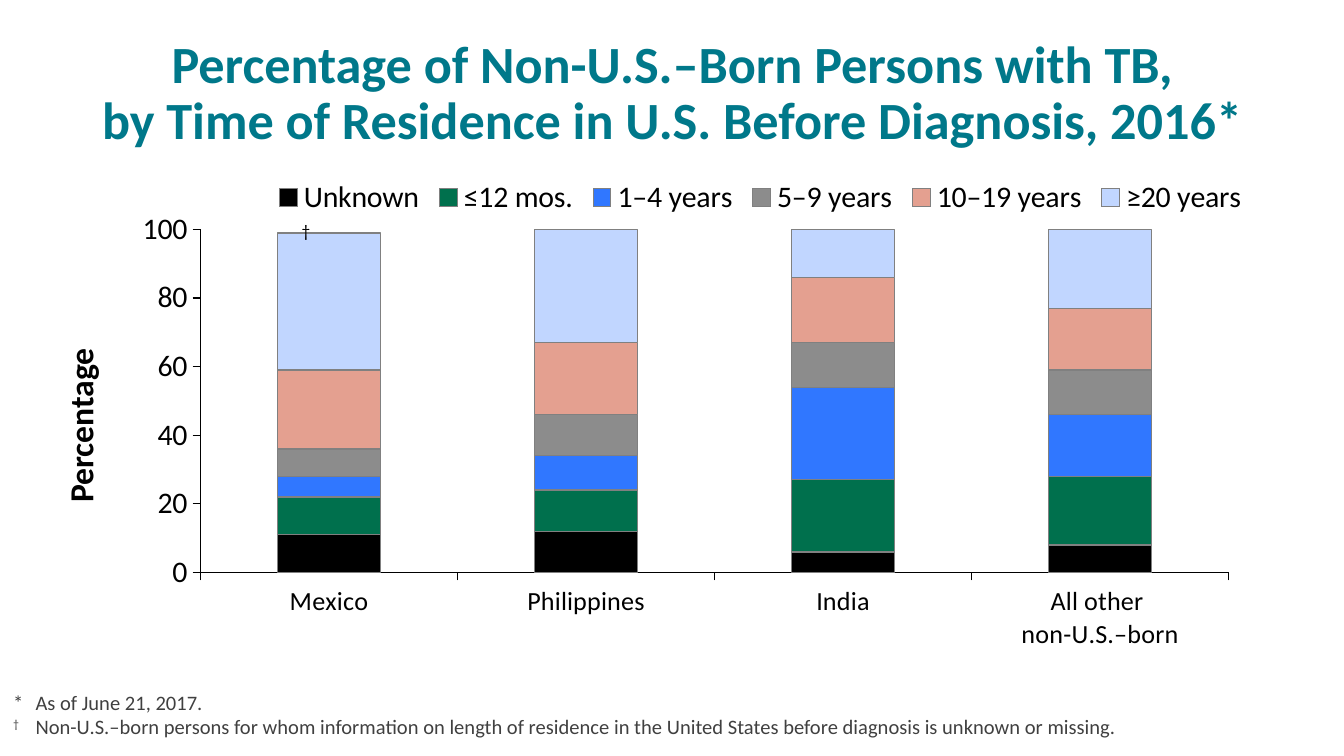
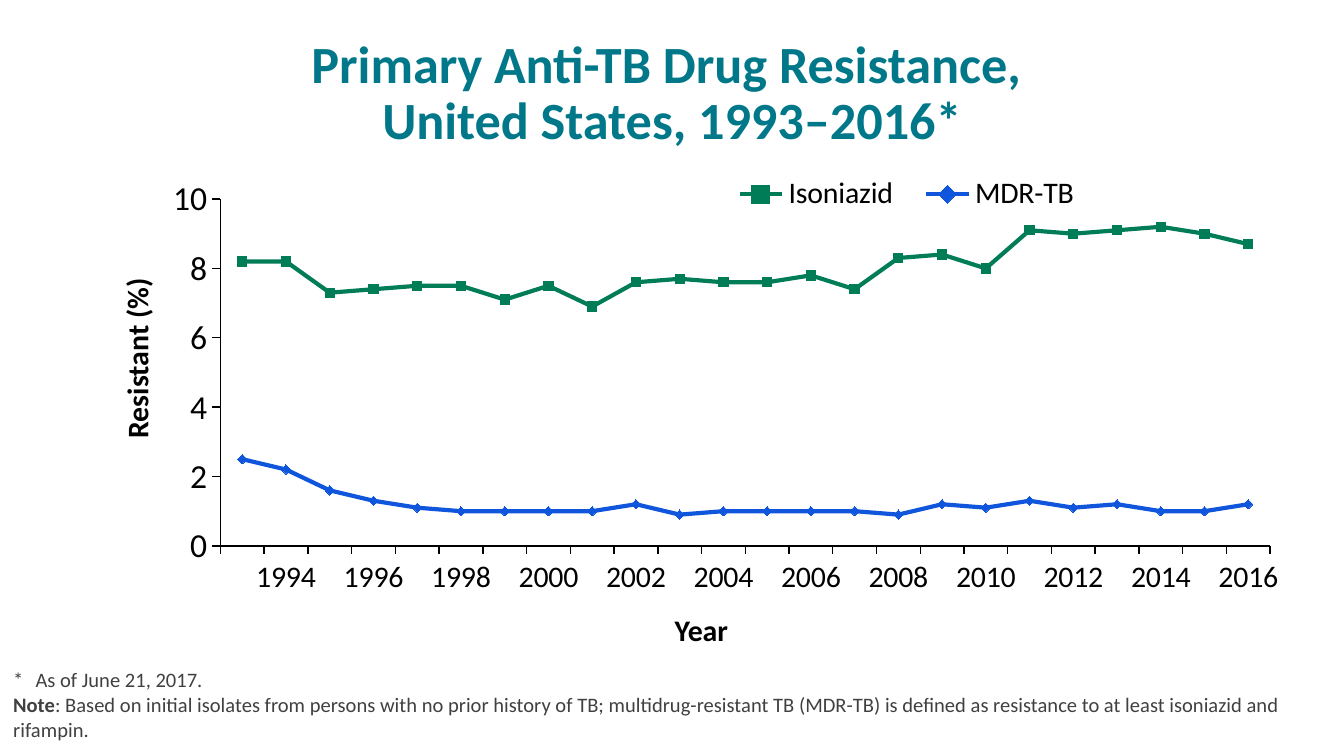
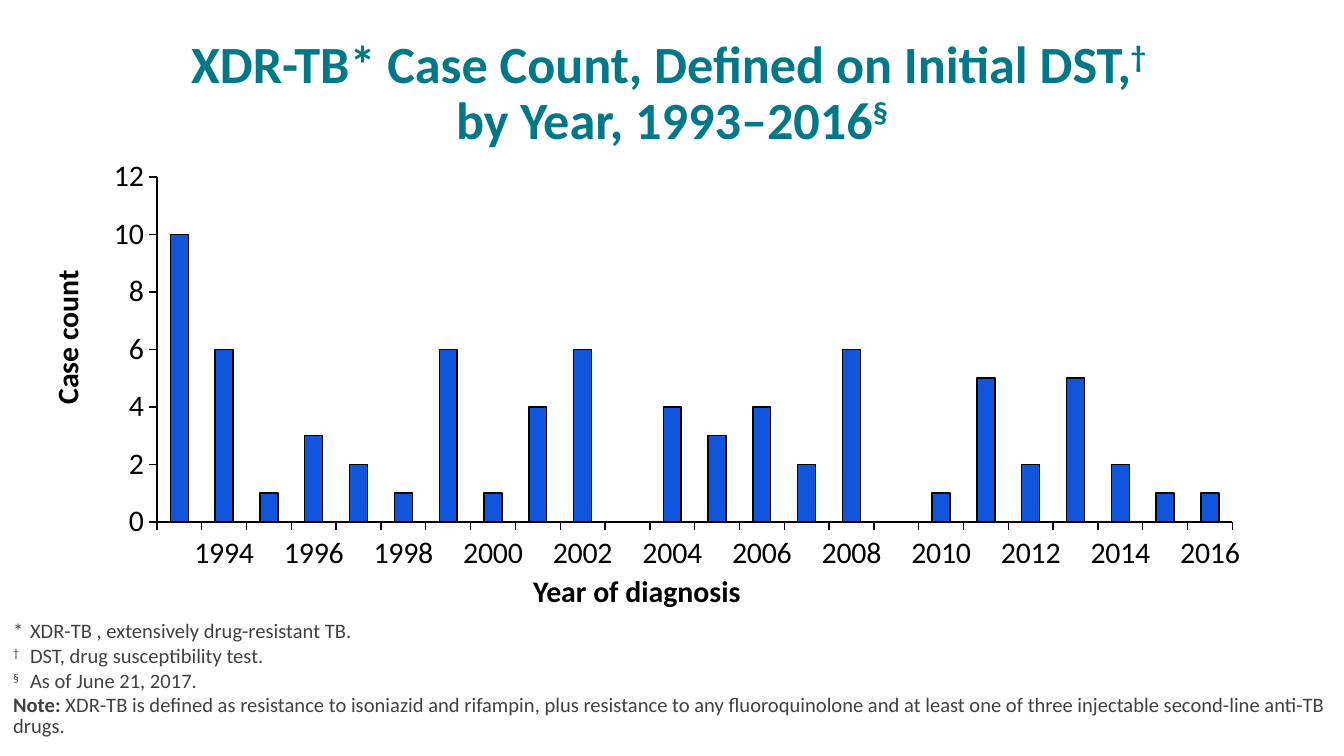
from lxml.etree import SubElement
from pptx import Presentation
from pptx.chart.data import CategoryChartData
from pptx.dml.color import RGBColor
from pptx.enum.chart import XL_CHART_TYPE, XL_LEGEND_POSITION, XL_MARKER_STYLE, XL_TICK_MARK
from pptx.enum.text import MSO_ANCHOR, MSO_AUTO_SIZE, PP_ALIGN
from pptx.oxml.ns import qn
from pptx.util import Emu, Pt

PX = 9525  # EMU in one px, 96 px to the inch
FONT = "Calibri"
COLORS = {
    "title": "00788A", "text": "000000", "note": "404040", "bar edge": "808080",
    "blue": "0F56DC", "green": "007D57",
    "unknown": "000000", "up to 1": "00704D", "1 to 4": "3077FF",
    "5 to 9": "8C8C8C", "10 to 19": "E4A090", "20 and over": "C1D6FF",
}
TITLE_BOX = (48, 22, 864, 90)
YEARS = [str(year) if year % 2 == 0 else "" for year in range(1993, 2017)]


def px(*lengths):
    return [Emu(round(length * PX)) for length in lengths]


def color(name):
    return RGBColor.from_string(COLORS[name])


def style_font(font, size, color_name="text", bold=False):
    font.name, font.size, font.bold = FONT, Pt(size), bold
    font.color.rgb = color(color_name)


# Text: a line is a list of pieces, each plain text or a (style, text) pair
def add_pieces(paragraph, pieces):
    for piece in pieces:
        style, text = ("plain", piece) if isinstance(piece, str) else piece
        run = paragraph.add_run()
        run.text = text
        if style == "bold":
            run.font.bold = True
        elif style == "super":
            run.font._element.set("baseline", "30000")


def add_text_box(slide, box, wrap=True):
    shape = slide.shapes.add_textbox(*px(*box))
    shape.text_frame.word_wrap = wrap
    return shape


def add_title(slide, lines):
    title = slide.shapes.title
    title.left, title.top, title.width, title.height = px(*TITLE_BOX)
    frame = title.text_frame
    frame.auto_size = MSO_AUTO_SIZE.NONE
    frame.vertical_anchor = MSO_ANCHOR.BOTTOM
    paragraph = frame.paragraphs[0]
    paragraph.alignment = PP_ALIGN.CENTER
    paragraph.line_spacing = Pt(30)
    style_font(paragraph.font, 28, "title", True)
    for number, pieces in enumerate(lines):
        if number:
            paragraph.add_line_break()
        add_pieces(paragraph, pieces)


def add_axis_label(slide, box, text, size=16, vertical=False):
    left, top, width, height = box
    if vertical:  # swap the sides about the centre, then turn
        box = (left + (width - height) / 2, top + (height - width) / 2, height, width)
    shape = add_text_box(slide, box)
    if vertical:
        shape.rotation = 270
    paragraph = shape.text_frame.paragraphs[0]
    paragraph.alignment = PP_ALIGN.CENTER
    style_font(paragraph.font, size, bold=True)
    add_pieces(paragraph, [text])


def add_footnotes(slide, box, notes, indent, line_spacing=None, space_before=0):
    """Notes with a tab hang from their mark; the others start at the margin."""
    frame = add_text_box(slide, box).text_frame
    for number, pieces in enumerate(notes):
        paragraph = frame.add_paragraph() if number else frame.paragraphs[0]
        if any("\t" in piece for piece in pieces if isinstance(piece, str)):
            properties = paragraph._p.get_or_add_pPr()
            properties.set("marL", str(indent * PX))
            properties.set("indent", str(-indent * PX))
        if line_spacing:
            paragraph.line_spacing = Pt(line_spacing)
        if number and space_before:
            paragraph.space_before = Pt(space_before)
        style_font(paragraph.font, 11, "note")
        add_pieces(paragraph, pieces)


# Charts
def set_layout(parent, position, fractions, inner=False):
    for layout in parent.findall(qn("c:layout")):
        parent.remove(layout)
    layout = SubElement(parent, qn("c:layout"))
    parent.insert(position, layout)
    manual = SubElement(layout, qn("c:manualLayout"))
    settings = [("layoutTarget", "inner")] if inner else []
    settings += [("xMode", "edge"), ("yMode", "edge"), *zip("xywh", fractions)]
    for name, value in settings:
        SubElement(manual, qn(f"c:{name}")).set("val", str(value))


def style_axis(axis, size):
    axis.has_major_gridlines = False
    axis.major_tick_mark = XL_TICK_MARK.OUTSIDE
    axis.minor_tick_mark = XL_TICK_MARK.NONE
    axis.format.line.color.rgb = color("text")
    axis.format.line.width = Pt(0.75)
    style_font(axis.tick_labels.font, size)


def add_plain_chart(slide, kind, box, categories, series, plot_area, maximum, step,
                    category_size=16, value_size=16):
    data = CategoryChartData()
    data.categories = categories
    for name, values in series:
        data.add_series(name, values)
    chart = slide.shapes.add_chart(kind, *px(*box), data).chart
    chart.has_title = chart.has_legend = False
    style_font(chart.font, 16)
    style_axis(chart.category_axis, category_size)
    style_axis(chart.value_axis, value_size)
    axis = chart.value_axis
    axis.minimum_scale, axis.maximum_scale, axis.major_unit = 0, maximum, step
    axis.tick_labels.number_format = "0"
    axis.tick_labels.number_format_is_linked = False
    chart.plots[0].vary_by_categories = False
    set_layout(chart._chartSpace.chart.plotArea, 0, plot_area, inner=True)
    return chart


def add_legend(chart, position, fractions):
    chart.has_legend = True
    legend = chart.legend
    legend.position = position
    legend.include_in_layout = False
    style_font(legend.font, 16)
    set_layout(legend._element, 1, fractions)


def style_bars(chart, fills, edge):
    chart.plots[0].gap_width = 150
    for series, fill in zip(chart.plots[0].series, fills):
        series.format.fill.solid()
        series.format.fill.fore_color.rgb = color(fill)
        series.format.line.color.rgb = color(edge)
        series.format.line.width = Pt(0.75)


def style_lines(chart, looks):
    for series, (name, marker_style) in zip(chart.plots[0].series, looks):
        series.smooth = False
        series.format.line.color.rgb = color(name)
        series.format.line.width = Pt(2.25)
        marker = series.marker
        marker.style, marker.size = marker_style, 5
        marker.format.fill.solid()
        marker.format.fill.fore_color.rgb = color(name)
        marker.format.line.color.rgb = color(name)


# Slides
def build_residence_slide(slide):
    add_title(slide, [["Percentage of Non-U.S.–Born Persons with TB,"],
                      ["by Time of Residence in U.S. Before Diagnosis, 2016*"]])
    add_footnotes(slide, (0, 488, 960, 44), [
        ["*\tAs of June 21, 2017."],
        [("super", "†"), "\tNon-U.S.–born persons for whom information on length of residence "
         "in the United States before diagnosis is unknown or missing."],
    ], indent=16)
    add_axis_label(slide, (38, 198, 38, 212), "Percentage", 18, vertical=True)
    chart = add_plain_chart(
        slide, XL_CHART_TYPE.COLUMN_STACKED, (78, 122, 816, 350),
        ["Mexico", "Philippines", "India", "All other \nnon-U.S.–born"],
        [("Unknown", (11, 12, 6, 8)), ("≤12 mos.", (11, 12, 21, 20)),
         ("1–4 years", (6, 10, 27, 18)), ("5–9 years", (8, 12, 13, 13)),
         ("10–19 years", (23, 21, 19, 18)), ("≥20 years", (40, 33, 14, 23))],
        (0.08, 0.12, 0.9, 0.7), maximum=100, step=20, category_size=14)
    chart.plots[0].overlap = 100
    style_bars(chart, ["unknown", "up to 1", "1 to 4", "5 to 9", "10 to 19", "20 and over"],
               "bar edge")
    add_legend(chart, XL_LEGEND_POSITION.TOP, (0.14, 0.01, 0.86, 0.09))

    # Footnote mark by the legend
    mark = add_text_box(slide, (206, 150, 30, 36), wrap=False)
    paragraph = mark.text_frame.paragraphs[0]
    style_font(paragraph.font, 16)
    add_pieces(paragraph, [("super", "†")])


def build_resistance_slide(slide):
    add_title(slide, [["Primary Anti-TB Drug Resistance, "], ["United States, 1993–2016*"]])
    add_footnotes(slide, (0, 472, 960, 60), [
        ["*\tAs of June 21, 2017."],
        [("bold", "Note"), ": Based on initial isolates from persons with no prior history of TB; "
         "multidrug-resistant TB (MDR-TB) is defined as resistance to at least isoniazid and "
         "rifampin."],
    ], indent=16)
    add_axis_label(slide, (80, 36, 36, 440), "Resistant (%)", vertical=True)
    chart = add_plain_chart(
        slide, XL_CHART_TYPE.LINE_MARKERS, (108, 121, 824, 354), YEARS,
        [("Isoniazid", (8.2, 8.2, 7.3, 7.4, 7.5, 7.5, 7.1, 7.5, 6.9, 7.6, 7.7, 7.6,
                        7.6, 7.8, 7.4, 8.3, 8.4, 8, 9.1, 9, 9.1, 9.2, 9, 8.7)),
         ("MDR-TB", (2.5, 2.2, 1.6, 1.3, 1.1, 1, 1, 1, 1, 1.2, 0.9, 1,
                     1, 1, 1, 0.9, 1.2, 1.1, 1.3, 1.1, 1.2, 1, 1, 1.2))],
        (0.06, 0.06, 0.91, 0.7), maximum=10, step=2, value_size=18)
    style_lines(chart, [("green", XL_MARKER_STYLE.SQUARE), ("blue", XL_MARKER_STYLE.DIAMOND)])
    add_legend(chart, XL_LEGEND_POSITION.BOTTOM, (0.49, 0.01, 0.33, 0.08))
    add_axis_label(slide, (431, 432, 140, 36), "Year")


def build_case_count_slide(slide):
    add_title(slide, [["XDR-TB* Case Count, Defined on Initial DST,", ("super", "† ")],
                      ["by Year, 1993–2016", ("super", "§")]])
    chart = add_plain_chart(
        slide, XL_CHART_TYPE.COLUMN_CLUSTERED, (62, 108, 835, 308), YEARS,
        [("Series 1", (10, 6, 1, 3, 2, 1, 6, 1, 4, 6, 0, 4,
                       3, 4, 2, 6, 0, 1, 5, 2, 5, 2, 1, 1))],
        (0.06, 0.06, 0.92, 0.8), maximum=12, step=2)
    style_bars(chart, ["blue"], "text")
    add_footnotes(slide, (0, 440, 960, 96), [
        ["*\tXDR-TB , extensively drug-resistant TB."],
        [("super", "†"), "\tDST, drug susceptibility test."],
        [("super", "§"), "\tAs of June 21, 2017."],
        [("bold", "Note: "), "XDR-TB is defined as resistance to isoniazid and rifampin, plus "
         "resistance to any fluoroquinolone and at least one of three injectable second-line "
         "anti-TB drugs."],
    ], indent=12, line_spacing=11, space_before=2.2)
    add_axis_label(slide, (30, 21, 36, 440), "Case count", vertical=True)
    add_axis_label(slide, (235, 404, 440, 36), "Year of diagnosis")


def main():
    presentation = Presentation()
    presentation.slide_width, presentation.slide_height = px(960, 540)
    title_only = presentation.slide_layouts[5]
    for build in (build_residence_slide, build_resistance_slide, build_case_count_slide):
        build(presentation.slides.add_slide(title_only))
    presentation.save("out.pptx")


if __name__ == "__main__":
    main()
